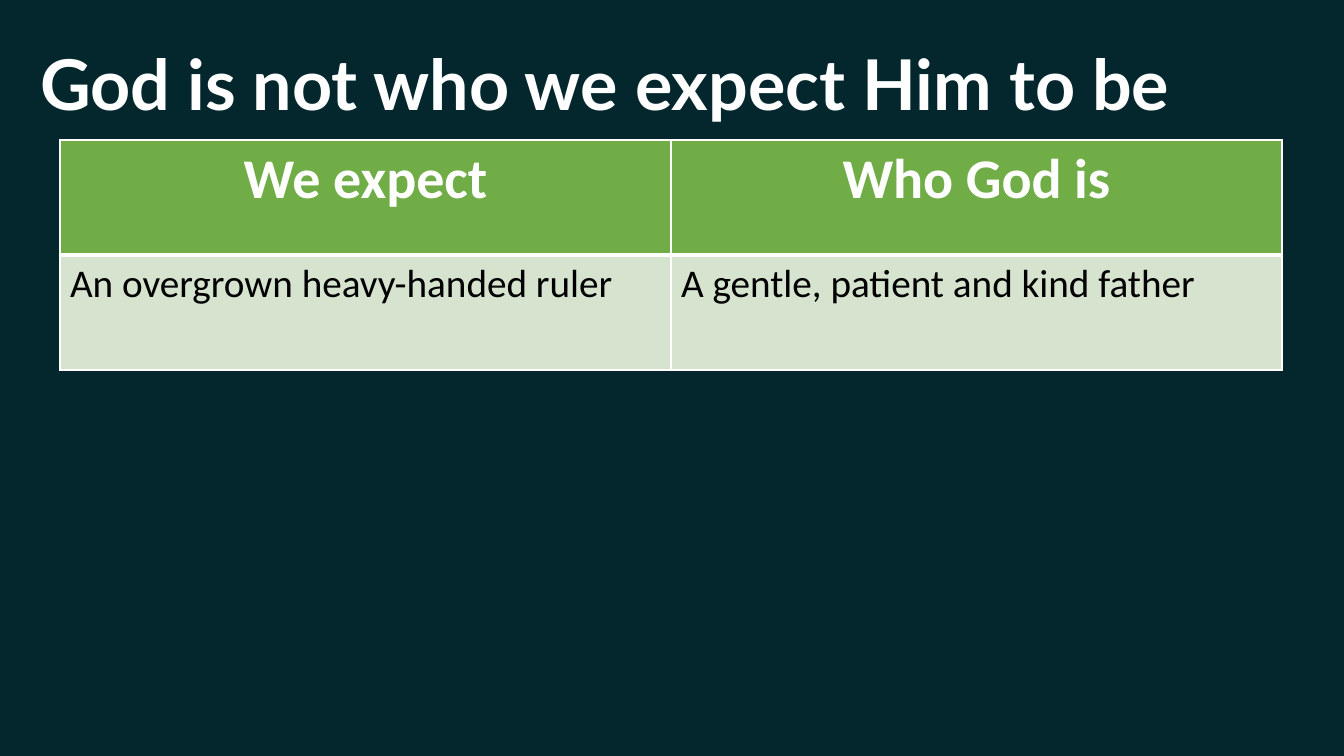
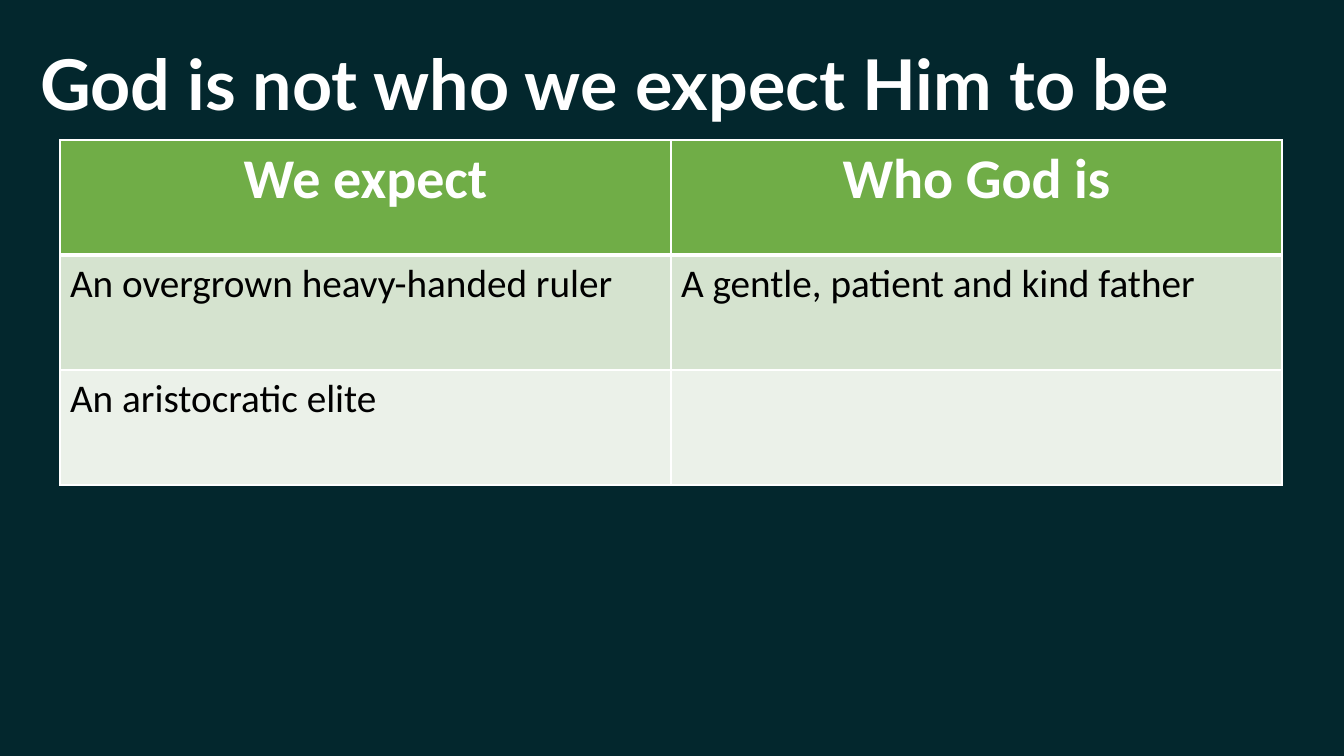
from lxml import etree
from pptx import Presentation
from pptx import util as u
from pptx.dml.color import RGBColor
from pptx.enum import text
from pptx.oxml.ns import qn

PX = 12192000 / 1344
NAVY, WHITE, BLACK, GREEN = "03272D", "FFFFFF", "000000", "70AD47"
BANDS = ["D5E3CF", "EBF1E9"]
TABLE_LEFT, TABLE_TOP, COLUMN_WIDTH, ROW_HEIGHT = 60, 140, 611, 115

HEADER = ["We expect", "Who God is"]
RULER = ["An overgrown heavy-handed ruler", "A gentle, patient and kind father"]
ELITE = ["An aristocratic elite", ""]


def paint(color_holder, color):
    """Give a fill or a font a solid colour."""
    if hasattr(color_holder, "solid"):
        color_holder.solid()
        color_holder = color_holder.fore_color
    else:
        color_holder = color_holder.color
    color_holder.rgb = RGBColor.from_string(color)


def add_borders(cell, widths):
    """Draw white borders, with widths in points for left, right, top, bottom."""
    properties = cell._tc.get_or_add_tcPr()
    for index, (side, width) in enumerate(zip("LRTB", widths)):
        line = etree.Element(qn(f"a:ln{side}"), w=str(u.Pt(width)))
        fill = etree.SubElement(line, qn("a:solidFill"))
        etree.SubElement(fill, qn("a:srgbClr"), val=WHITE)
        properties.insert(index, line)


deck = Presentation()
deck.slide_width, deck.slide_height = round(1344 * PX), round(756 * PX)
paint(deck.slide_master.background.fill, NAVY)
title_only = deck.slide_layouts.get_by_name("Title Only")

for rows in ([HEADER, RULER], [HEADER, RULER, ELITE]):
    page = deck.slides.add_slide(title_only)

    title = page.shapes.title
    title.left, title.top, title.width, title.height = (
        round(length * PX) for length in (30, 15, 1268, 146))
    title.text = "God is not who we expect Him to be"
    title.text_frame.auto_size = text.MSO_AUTO_SIZE.NONE
    title.text_frame.vertical_anchor = text.MSO_ANCHOR.MIDDLE
    para = title.text_frame.paragraphs[0]
    para.alignment = text.PP_ALIGN.LEFT
    para.line_spacing = 0.9
    para.font.name, para.font.size, para.font.bold = "Lato", u.Pt(50), True
    paint(para.font, WHITE)

    table = page.shapes.add_table(
        len(rows), len(HEADER),
        *(round(length * PX) for length in (
            TABLE_LEFT, TABLE_TOP,
            COLUMN_WIDTH * len(HEADER), ROW_HEIGHT * len(rows)))).table
    for row_index, row in enumerate(rows):
        is_header = row_index == 0
        for column_index, wording in enumerate(row):
            cell = table.cell(row_index, column_index)
            cell.text = wording
            paint(cell.fill, GREEN if is_header else BANDS[(row_index - 1) % 2])
            add_borders(cell, (1, 1, 3 if row_index == 1 else 1, 3 if is_header else 1))
            para = cell.text_frame.paragraphs[0]
            para.alignment = text.PP_ALIGN.CENTER if is_header else text.PP_ALIGN.LEFT
            para.font.name = "Calibri"
            para.font.size = u.Pt(40 if is_header else 28)
            para.font.bold = is_header
            paint(para.font, WHITE if is_header else BLACK)

deck.save("out.pptx")
